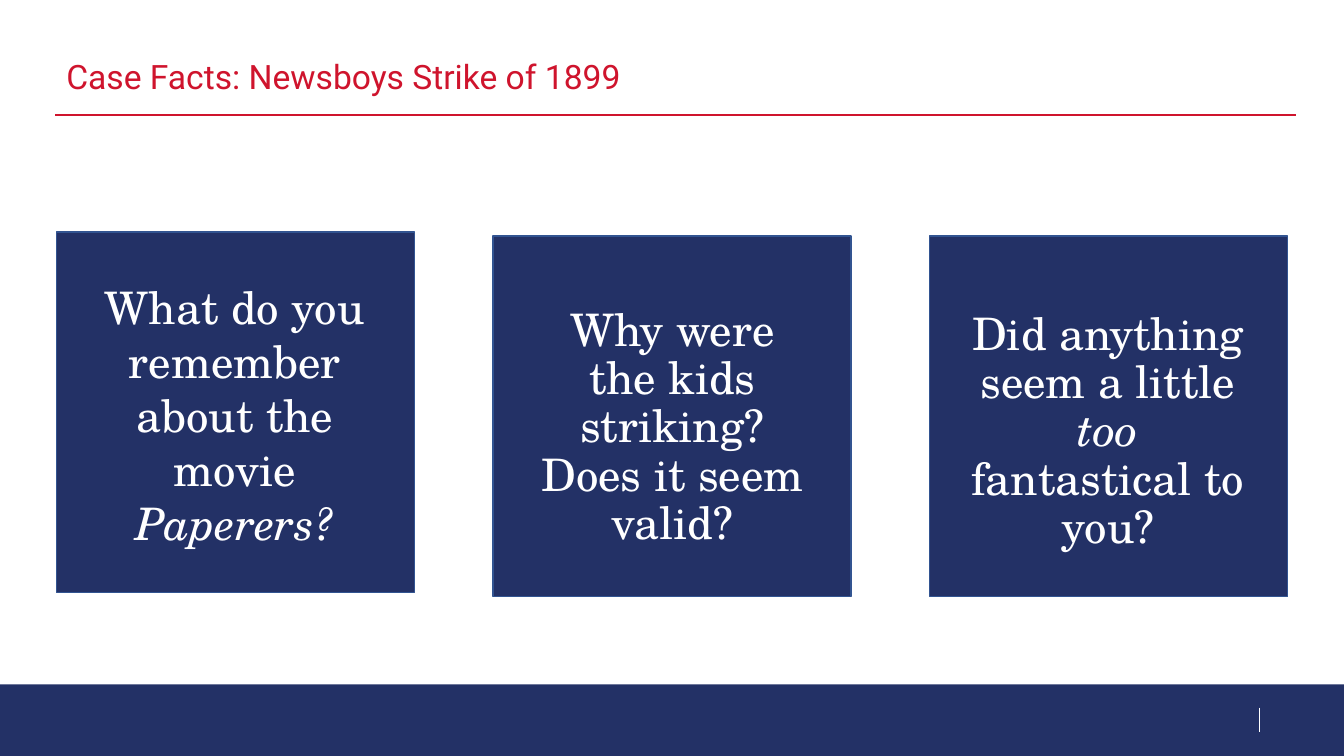
"""Build the Newsboys Strike discussion slide with three question cards."""
from dataclasses import dataclass

from lxml import etree
from pptx import Presentation
from pptx.dml.color import RGBColor
from pptx.enum.shapes import MSO_CONNECTOR, MSO_SHAPE
from pptx.enum.text import MSO_ANCHOR, PP_ALIGN
from pptx.oxml.ns import qn
from pptx.util import Inches, Pt

RECTANGLE = MSO_SHAPE.RECTANGLE
STRAIGHT = MSO_CONNECTOR.STRAIGHT
TOP, BOTTOM = MSO_ANCHOR.TOP, MSO_ANCHOR.BOTTOM
LEFT, CENTER = PP_ALIGN.LEFT, PP_ALIGN.CENTER


@dataclass(frozen=True)
class Theme:
    navy: RGBColor = RGBColor(0x23, 0x31, 0x66)
    card_edge: RGBColor = RGBColor(0x32, 0x54, 0x91)
    red: RGBColor = RGBColor(0xCF, 0x14, 0x2D)
    white: RGBColor = RGBColor(0xFF, 0xFF, 0xFF)
    heading_font: str = "Roboto"
    question_font: str = "TeX Gyre Schola"
    heading_size: Pt = Pt(24)
    question_size: Pt = Pt(32)


theme = Theme()
prs = Presentation()
prs.slide_width, prs.slide_height = Inches(13.33), Inches(7.5)
slide = prs.slides.add_slide(prs.slide_layouts[6])


def add_panel(left, top, width, height):
    panel = slide.shapes.add_shape(
        RECTANGLE, Inches(left), Inches(top), Inches(width), Inches(height))
    panel.shadow.inherit = False
    panel.fill.solid()
    panel.fill.fore_color.rgb = theme.navy
    panel.line.fill.background()
    return panel


def add_words(box, runs, font, size, color, align, anchor, spacing, inset):
    left, top, width, height = map(Inches, box)
    frame = slide.shapes.add_textbox(left, top, width, height).text_frame
    frame.word_wrap = True
    frame.vertical_anchor = anchor
    frame.margin_left = frame.margin_right = Inches(inset[0])
    frame.margin_top = frame.margin_bottom = Inches(inset[1])
    paragraph = frame.paragraphs[0]
    paragraph.alignment = align
    paragraph.line_spacing = spacing
    for text, italic in runs:
        run = paragraph.add_run()
        run.text = text
        run.font.name, run.font.size = font, size
        run.font.color.rgb, run.font.italic = color, italic


add_panel(0, 6.79, 13.33, 0.71)

rules = [
    (12.49, 7.02, 12.49, 7.26, theme.white, 0.5),
    (0.55, 1.14, 12.85, 1.14, theme.red, 1.25),
]
for x1, y1, x2, y2, color, weight in rules:
    rule = slide.shapes.add_connector(
        STRAIGHT, Inches(x1), Inches(y1), Inches(x2), Inches(y2))
    rule.line.color.rgb = color
    rule.line.width = Pt(weight)
    etree.SubElement(rule._element.spPr, qn("a:effectLst"))

add_words((0.56, 0.42, 11.7, 0.59), [("Case Facts: Newsboys Strike of 1899", False)],
          theme.heading_font, theme.heading_size, theme.red,
          LEFT, BOTTOM, 0.9, (0.1, 0.05))

questions = [
    (2.3, (0.73, 2.73, 3.2, 2.79), 1.0, (0.1, 0.05),
     [("What do you remember about the movie ", False), ("Paperers?", True)]),
    (2.34, (5.14, 2.92, 3.06, 2.34), 0.9, (0.13, 0.13),
     [("Why were the kids striking? Does it seem valid?", False)]),
    (2.34, (9.46, 2.96, 3.06, 2.34), 0.9, (0.13, 0.13),
     [("Did anything seem a little ", False), ("too", True),
      (" fantastical to you?", False)]),
]
for column, (card_top, box, spacing, inset, runs) in enumerate(questions):
    card = add_panel(0.56 + 4.33 * column, card_top, 3.55, 3.58)
    card.line.color.rgb = theme.card_edge
    card.line.width = Pt(1)
    add_words(box, runs, theme.question_font, theme.question_size, theme.white,
              CENTER, TOP, spacing, inset)

prs.save("out.pptx")
